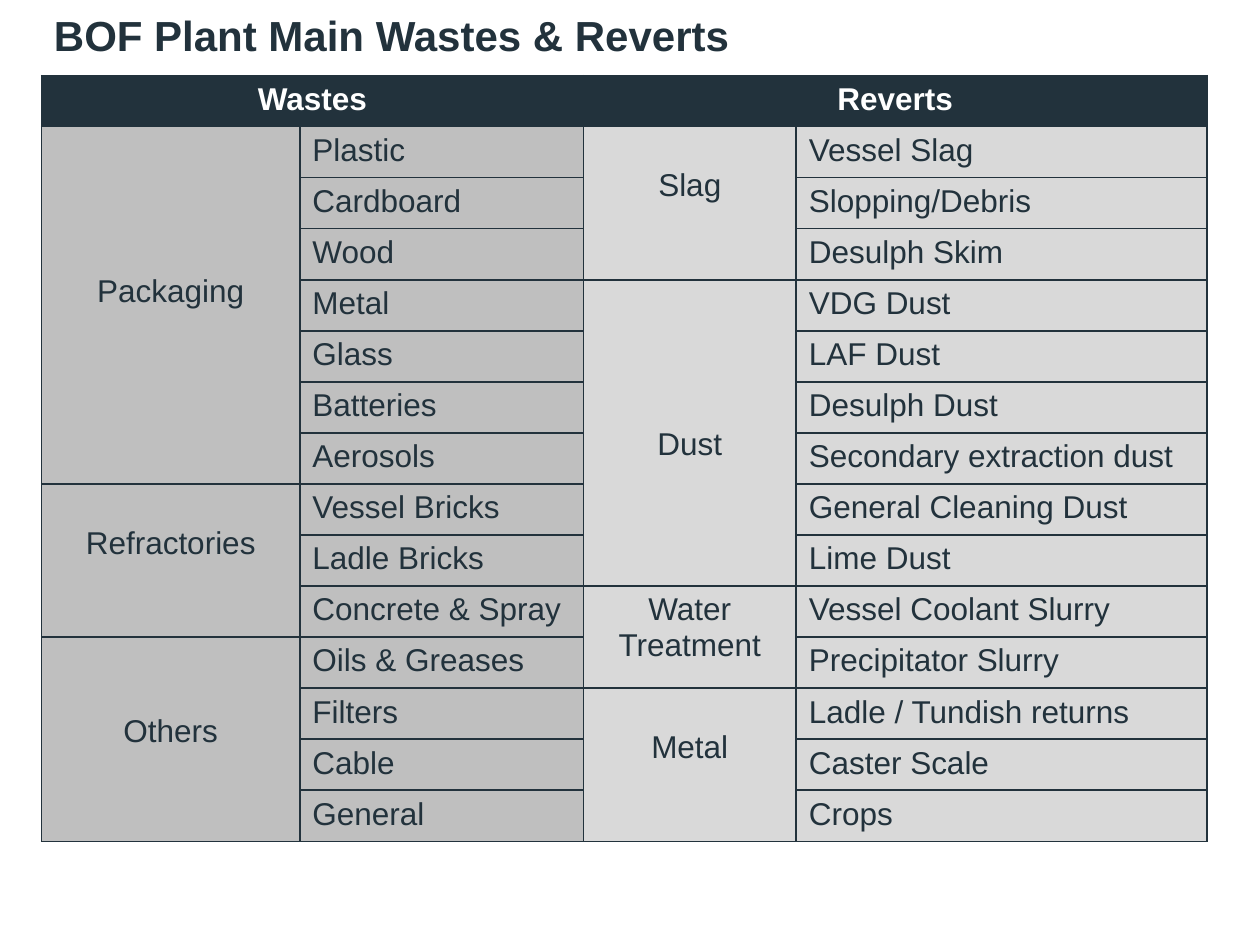
from lxml.etree import SubElement
from pptx import Presentation
from pptx.dml.color import RGBColor
from pptx.enum.text import MSO_ANCHOR, PP_ALIGN
from pptx.oxml.ns import qn
from pptx.util import Inches, Pt

COLORS = {"navy": "22323C", "white": "FFFFFF", "wastes": "BFBFBF", "reverts": "D9D9D9"}
LINE_HEIGHT = 0.28

# Group name, lines of space above the name, items
WASTES = [
    ("Packaging", 4, ["Plastic", "Cardboard", "Wood", "Metal", "Glass", "Batteries", "Aerosols"]),
    ("Refractories", 1, ["Vessel Bricks", "Ladle Bricks", "Concrete & Spray"]),
    ("Others", 2, ["Oils & Greases", "Filters", "Cable", "General"]),
]
REVERTS = [
    ("Slag", 1, ["Vessel Slag", "Slopping/Debris", "Desulph Skim"]),
    ("Dust", 4, ["VDG Dust", "LAF Dust", "Desulph Dust", "Secondary extraction dust",
                 "General Cleaning Dust", "Lime Dust"]),
    ("Water Treatment", 0, ["Vessel Coolant Slurry", "Precipitator Slurry"]),
    ("Metal", 1, ["Ladle / Tundish returns", "Caster Scale", "Crops"]),
]


def write(para, text, size=18, color="navy", bold=False, align=PP_ALIGN.LEFT):
    para.alignment = align
    span = para.add_run()
    span.text = text
    for name, value in {"name": "Arial", "size": Pt(size), "bold": bold}.items():
        setattr(span.font, name, value)
    span.font.color.rgb = RGBColor.from_string(COLORS[color])


def style_cell(cell, fill):
    """Give the cell a thin navy border on every side and a solid fill."""
    properties = cell._tc.get_or_add_tcPr()
    for side in ("lnL", "lnR", "lnT", "lnB"):
        line = SubElement(properties, qn(f"a:{side}"), w=str(Pt(1)))
        solid = SubElement(line, qn("a:solidFill"))
        SubElement(solid, qn("a:srgbClr"), val=COLORS["navy"])
    cell.fill.solid()
    cell.fill.fore_color.rgb = RGBColor.from_string(COLORS[fill])


deck = Presentation()
deck.slide_width, deck.slide_height = Inches(10), Inches(7.5)
page = deck.slides.add_slide(deck.slide_layouts[6])

row_count = 1 + sum(len(items) for _, _, items in WASTES)
table = page.shapes.add_table(
    row_count, 4, Inches(0.33), Inches(0.6), Inches(9.25), Inches(6.08)
).table
for column, width in zip(table.columns, (2.05, 2.25, 1.69, 3.26)):
    column.width = Inches(width)
for row in table.rows:
    row.height = Inches(6.08 / row_count)

for row in range(row_count):
    for column in range(4):
        body_fill = "wastes" if column < 2 else "reverts"
        style_cell(table.cell(row, column), body_fill if row else "navy")

for left, heading, groups in ((0, "Wastes", WASTES), (2, "Reverts", REVERTS)):
    header = table.cell(0, left)
    header.merge(table.cell(0, left + 1))
    write(header.text_frame.paragraphs[0], heading, color="white", bold=True,
          align=PP_ALIGN.CENTER)
    top = 1
    for group, lines_above, items in groups:
        group_cell = table.cell(top, left)
        group_cell.merge(table.cell(top + len(items) - 1, left))
        group_cell.margin_top = Inches(0.05 + lines_above * LINE_HEIGHT)
        write(group_cell.text_frame.paragraphs[0], group, align=PP_ALIGN.CENTER)
        for row, item in enumerate(items, top):
            write(table.cell(row, left + 1).text_frame.paragraphs[0], item)
        top += len(items)

title = page.shapes.add_textbox(Inches(0.33), Inches(0), Inches(9.25), Inches(0.6))
title.text_frame.word_wrap = True
title.text_frame.vertical_anchor = MSO_ANCHOR.MIDDLE
title_para = title.text_frame.paragraphs[0]
title_para.line_spacing = 0.9
write(title_para, "BOF Plant Main Wastes & Reverts", size=24, bold=True)

deck.save("out.pptx")
